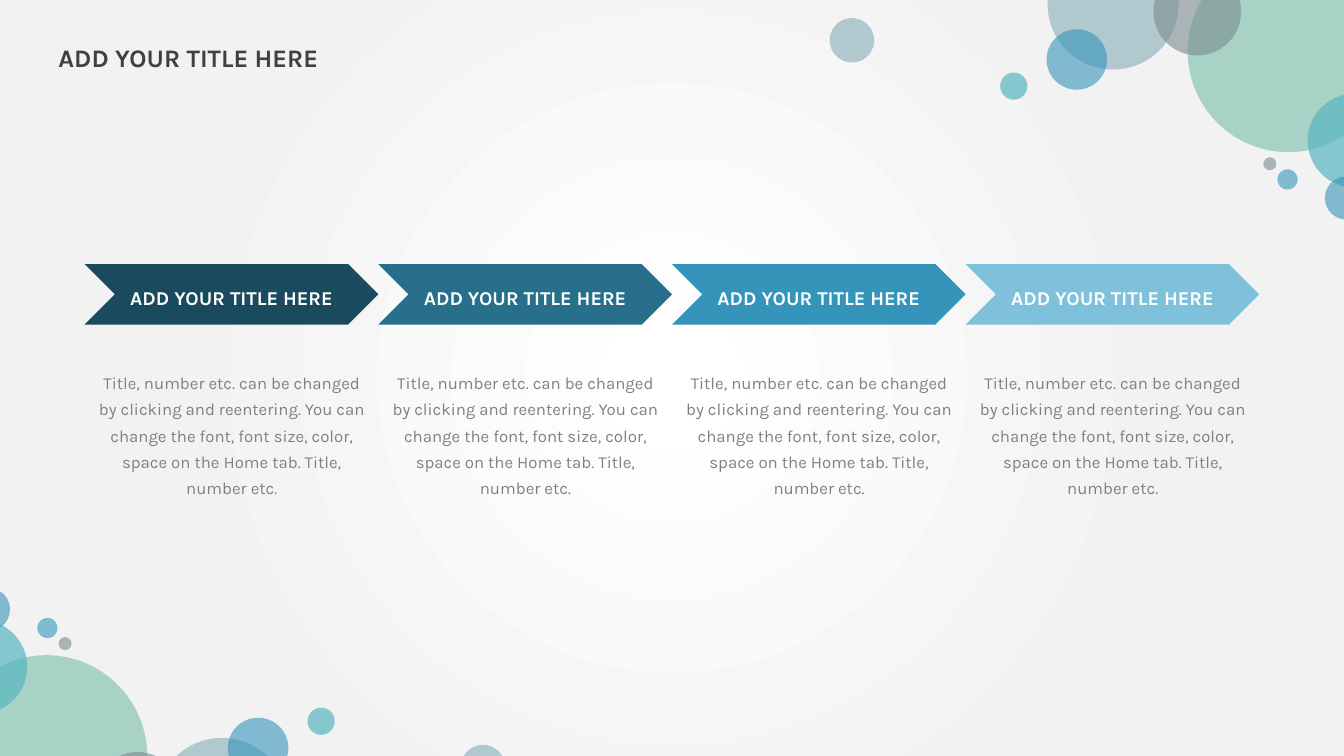
from lxml import etree
from pptx import Presentation
from pptx.dml.color import RGBColor
from pptx.enum.shapes import MSO_SHAPE
from pptx.enum.text import MSO_ANCHOR, PP_ALIGN
from pptx.oxml import parse_xml
from pptx.oxml.ns import qn
from pptx.util import Inches, Pt

OVAL, CHEVRON = MSO_SHAPE.OVAL, MSO_SHAPE.CHEVRON
TOP, MIDDLE = MSO_ANCHOR.TOP, MSO_ANCHOR.MIDDLE
LEFT, CENTER = PP_ALIGN.LEFT, PP_ALIGN.CENTER

WHITE = RGBColor(0xFF, 0xFF, 0xFF)
DARK = RGBColor(0x40, 0x40, 0x40)
GRAY = RGBColor(0x80, 0x80, 0x80)
MIST = RGBColor(0x84, 0xAC, 0xB6)
GREEN = RGBColor(0x75, 0xBD, 0xA7)
SLATE = RGBColor(0x7A, 0x8C, 0x8E)
BLUE = RGBColor(0x34, 0x94, 0xBA)
TEAL = RGBColor(0x58, 0xB6, 0xC0)
STEPS = [RGBColor(0x1A, 0x4A, 0x5D), RGBColor(0x27, 0x6F, 0x8B),
         BLUE, RGBColor(0x7F, 0xC1, 0xDB)]

HEAD = "ADD YOUR TITLE HERE"
BODY = ("Title, number etc. can be changed by clicking and reentering. "
        "You can change the font, font size, color, space on the Home tab. "
        "Title, number etc.")

# left, top, diameter, colour, opacity in percent
BUBBLES = [
    (10.39, -0.61, 1.3, MIST, 60),
    (11.78, -0.49, 2, GREEN, 60),
    (11.44, -0.32, 0.87, SLATE, 60),
    (10.38, 0.29, 0.6, BLUE, 60),
    (12.97, 0.93, 0.93, TEAL, 70),
    (9.92, 0.72, 0.27, TEAL, 70),
    (13.14, 1.75, 0.43, BLUE, 60),
    (12.67, 1.68, 0.2, BLUE, 60),
    (12.53, 1.56, 0.13, SLATE, 60),
    (8.23, 0.18, 0.44, MIST, 60),
]
TURN_X, TURN_Y = 13.24, 8.01  # twice the centre of the half turn
ROW_LEFT, ROW_WIDTH = 0.84, 11.65

GLOW = """<a:gradFill rotWithShape="1"
 xmlns:a="http://schemas.openxmlformats.org/drawingml/2006/main"><a:gsLst>
<a:gs pos="0"><a:srgbClr val="FFFFFF"/></a:gs>
<a:gs pos="67000"><a:srgbClr val="F2F2F2"/></a:gs>
<a:gs pos="100000"><a:srgbClr val="F2F2F2"/></a:gs></a:gsLst>
<a:path path="circle">
<a:fillToRect l="50000" t="50000" r="50000" b="50000"/></a:path></a:gradFill>"""


class Deck:
    font = "Karla"
    leading = 1.3

    def __init__(self, slide):
        self.slide = slide

    def glow(self):
        """Fill the background with a radial gradient."""
        self.slide.background.fill.solid()
        fill = next(self.slide.element.iter(qn("a:solidFill")))
        fill.getparent().replace(fill, parse_xml(GLOW))

    def label(self, shape, text, size, color, bold, align, anchor):
        frame = shape.text_frame
        frame.text = text
        frame.word_wrap = True
        frame.vertical_anchor = anchor
        para = frame.paragraphs[0]
        para.alignment = align
        para.line_spacing = self.leading
        para.space_before = Pt(0)
        font = para.runs[0].font
        font.name, font.size, font.bold = self.font, Pt(size), bold
        font.color.rgb = color

    def shape(self, kind, x, y, w, h, color):
        shape = self.slide.shapes.add_shape(
            kind, Inches(x), Inches(y), Inches(w), Inches(h))
        shape.shadow.inherit = False
        shape.fill.solid()
        shape.fill.fore_color.rgb = color
        shape.line.fill.background()
        return shape

    def bubble(self, x, y, size, color, opacity, angle):
        dot = self.shape(OVAL, x, y, size, size, color)
        dot.rotation = angle
        tint = next(dot.element.spPr.iter(qn("a:srgbClr")))
        etree.SubElement(tint, qn("a:alpha"), val=str(opacity * 1000))

    def title(self, text, x, y, w, h):
        box = self.slide.shapes.title
        box.left, box.top = Inches(x), Inches(y)
        box.width, box.height = Inches(w), Inches(h)
        self.label(box, text, 18, DARK, True, LEFT, TOP)

    def arrow(self, text, x, y, w, h, color):
        shape = self.shape(CHEVRON, x, y, w, h, color)
        self.label(shape, text, 14, WHITE, True, CENTER, MIDDLE)

    def note(self, text, x, y, w, h):
        box = self.slide.shapes.add_textbox(
            Inches(x), Inches(y), Inches(w), Inches(h))
        self.label(box, text, 12, GRAY, False, CENTER, TOP)


def main():
    prs = Presentation()
    prs.slide_width, prs.slide_height = Inches(13.33), Inches(7.5)
    deck = Deck(prs.slides.add_slide(prs.slide_layouts[5]))
    deck.glow()
    for x, y, size, color, opacity in BUBBLES:
        deck.bubble(x, y, size, color, opacity, 357.7)
    for x, y, size, color, opacity in BUBBLES:
        deck.bubble(TURN_X - x - size, TURN_Y - y - size,
                    size, color, opacity, 177.7)
    deck.title(HEAD, 0.48, 0.28, 3.72, 0.44)
    step = ROW_WIDTH / len(STEPS)
    for i, color in enumerate(STEPS):
        x = ROW_LEFT + i * step
        deck.arrow(HEAD, x, 2.62, step, 0.6, color)
        deck.note(BODY, x + 0.03, 3.59, 2.86, 1.21)
    prs.save("out.pptx")


if __name__ == "__main__":
    main()
